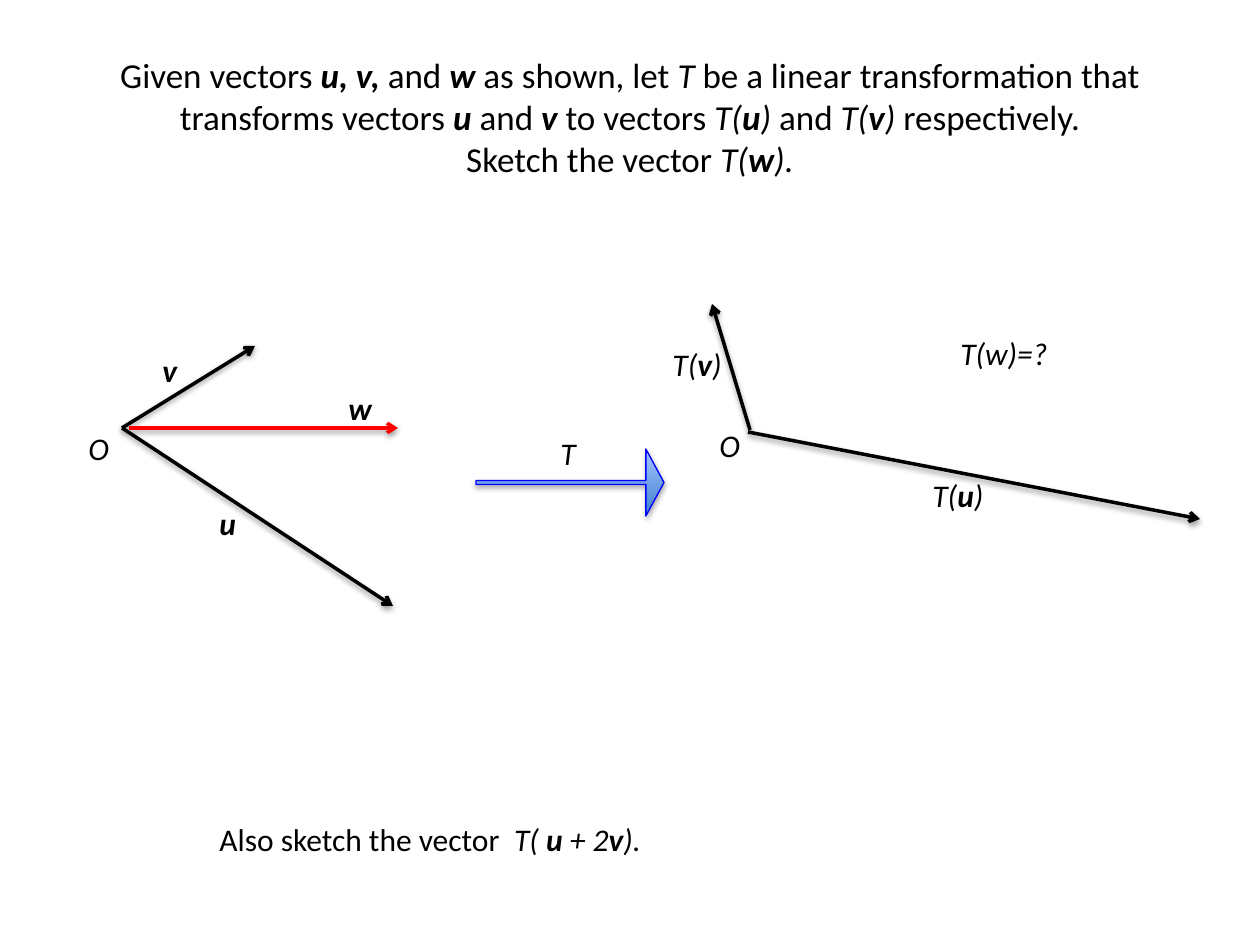
from lxml.etree import SubElement
from pptx import Presentation
from pptx.dml.color import RGBColor
from pptx.enum.shapes import MSO_CONNECTOR, MSO_SHAPE
from pptx.enum.text import MSO_ANCHOR, PP_ALIGN
from pptx.oxml import parse_xml
from pptx.oxml.ns import nsdecls, qn
from pptx.util import Emu, Pt

# Content: _..._ is italic, *...* inside it is bold; lengths in px
TITLE = ("Given vectors _*u, v, *_and _*w *_as shown, let _T _be a linear transformation "
         "that transforms vectors _*u *_and _*v *_to vectors _T(*u*) _and _T(*v*) _"
         "respectively.\nSketch the vector _T(*w*)._")
TITLE_BOX = (63, 38, 1134, 157)

VECTORS = [  # start, end, colour
    ((122, 428), (255, 346), "000000"),   # v
    ((122, 428), (393, 606), "000000"),   # u
    ((129, 428), (398, 428), "FF0000"),   # w
    ((750, 430), (712, 304), "000000"),   # T(v)
    ((748, 432), (1200, 519), "000000"),  # T(u)
]

LABELS = [  # text, left, top, width
    ("_*u*_", 207, 498, 50),
    ("_*w*_", 336, 383, 57),
    ("_*v*_", 150, 345, 48),
    ("_T(*u*)_", 920, 470, 84),
    ("_T(*v*)_", 660, 339, 83),
    ("_T_", 548, 428, 49),
    ("_O_", 76, 423, 54),
    ("_O_", 707, 420, 54),
    ("_T(w)=?_", 948, 328, 113),
    ("Also sketch the vector  _T( *u *+ 2*v*)._", 207, 814, 454),
]
LABEL_HEIGHT = 50

MAP_ARROW = (476, 449, 188, 67)
MAP_ADJUSTMENTS = (0.06, 0.27)
MAP_GRADIENT = ("3F80CE", "A4C4FF")


def px(*lengths):
    return [Emu(round(length * 914400 / 126)) for length in lengths]


def rgb(value):
    return RGBColor.from_string(value)


def write(paragraph, marked, size):
    """Add the marked text as runs, with line breaks at newlines."""
    for i, slanted in enumerate(marked.split("_")):
        for j, piece in enumerate(slanted.split("*")):
            for k, words in enumerate(piece.split("\n")):
                if k:
                    paragraph.add_line_break()
                if not words:
                    continue
                run = paragraph.add_run()
                run.text = words
                style = {"name": "Calibri", "size": Pt(size),
                         "italic": i % 2 == 1, "bold": j % 2 == 1}
                for key, value in style.items():
                    setattr(run.font, key, value)
                run.font.color.rgb = rgb("000000")


def add_shadow(part, distance, opacity):
    part._element.spPr.append(parse_xml(
        f'<a:effectLst {nsdecls("a")}><a:outerShdw blurRad="40000" dist="{distance}" '
        f'dir="5400000" rotWithShape="0"><a:srgbClr val="000000">'
        f'<a:alpha val="{opacity * 1000}"/></a:srgbClr></a:outerShdw></a:effectLst>'))


def set_line(line, colour, width):
    line.color.rgb = rgb(colour)
    line.width = Pt(width)


presentation = Presentation()
presentation.slide_width, presentation.slide_height = px(1260, 945)
slide = presentation.slides.add_slide(presentation.slide_layouts[5])
shapes = slide.shapes

# Title
title = shapes.title
for side, length in zip(("left", "top", "width", "height"), px(*TITLE_BOX)):
    setattr(title, side, length)
title.text_frame.vertical_anchor = MSO_ANCHOR.MIDDLE
problem = title.text_frame.paragraphs[0]
problem.alignment = PP_ALIGN.CENTER
write(problem, TITLE, 20)

# Vectors
for start, end, colour in VECTORS:
    vector = shapes.add_connector(MSO_CONNECTOR.STRAIGHT, *px(*start, *end))
    set_line(vector.line, colour, 2)
    SubElement(vector.line._get_or_add_ln(), qn("a:tailEnd"), type="arrow")
    add_shadow(vector, 20000, 38)

# Block arrow for the map T
map_arrow = shapes.add_shape(MSO_SHAPE.RIGHT_ARROW, *px(*MAP_ARROW))
for i, adjustment in enumerate(MAP_ADJUSTMENTS):
    map_arrow.adjustments[i] = adjustment
map_arrow.fill.gradient()
map_arrow.fill.gradient_angle = 90
for stop, colour in zip(map_arrow.fill.gradient_stops, MAP_GRADIENT):
    stop.color.rgb = rgb(colour)
set_line(map_arrow.line, "0000FF", 0.75)
add_shadow(map_arrow, 23000, 35)

# Labels
for text, left, top, width in LABELS:
    label = shapes.add_textbox(*px(left, top, width, LABEL_HEIGHT))
    label.text_frame.word_wrap = False
    write(label.text_frame.paragraphs[0], text, 18)

presentation.save("out.pptx")
